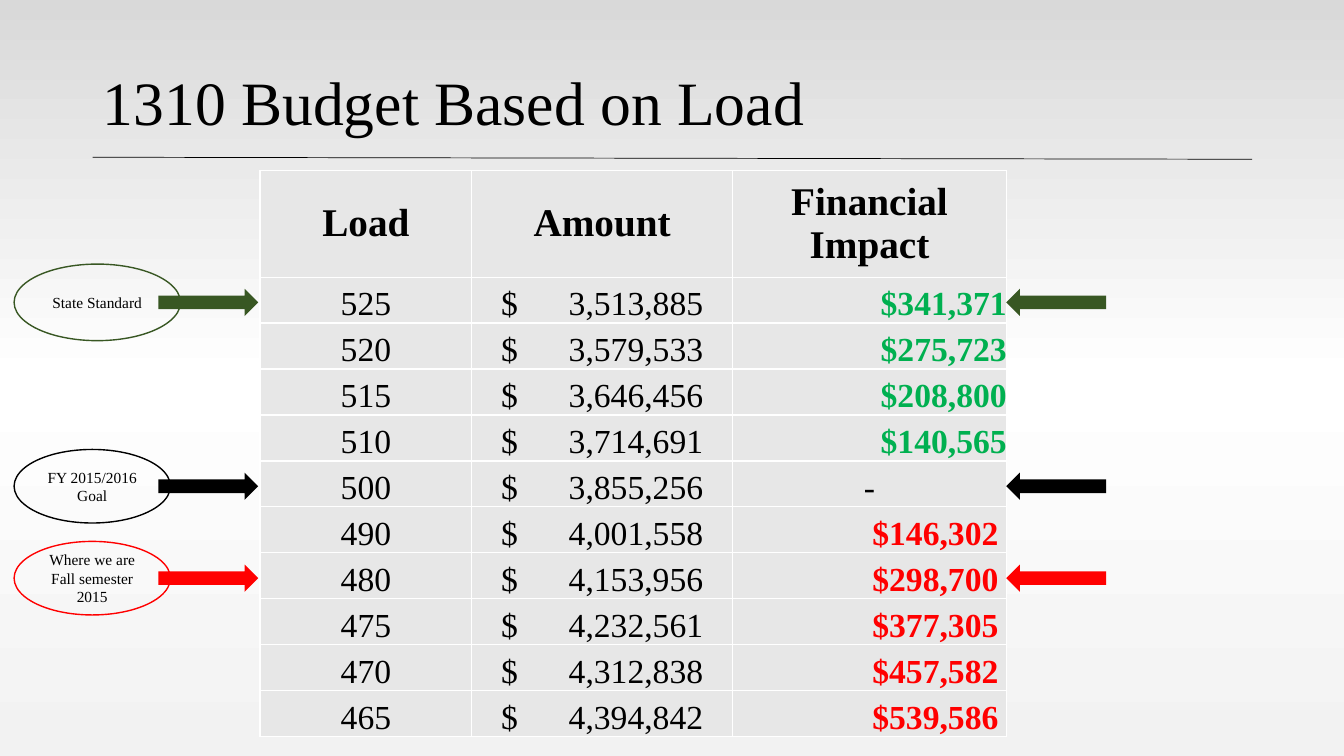
from lxml import etree
from pptx import Presentation
from pptx import util as u
from pptx.dml.color import RGBColor
from pptx.enum import shapes, text
from pptx.oxml.ns import qn

WIDTH, HEIGHT = u.Inches(13.33), u.Inches(7.5)
FONT = "Times New Roman"
BLACK, WHITE, GREY = "000000", "FFFFFF", "E7E7E7"
SAVING, COST, STANDARD = "00B050", "FF0000", "385723"
LEFT, CENTER, RIGHT = text.PP_ALIGN.LEFT, text.PP_ALIGN.CENTER, text.PP_ALIGN.RIGHT
MIDDLE, BOTTOM = text.MSO_ANCHOR.MIDDLE, text.MSO_ANCHOR.BOTTOM

# Table grid, in percent of the slide's width or height
TABLE_LEFT, TABLE_TOP = 19.35, 22.53
COLUMNS = [15.75, 19.4, 20.4]
HEADER_ROW, BODY_ROW = 14.13, 6.08
AMOUNT_INSET = 2.18

HEADINGS = ["Load", "Amount", "Financial Impact"]
BUDGET = [
    ("525", "3,513,885", "$341,371", SAVING),
    ("520", "3,579,533", "$275,723", SAVING),
    ("515", "3,646,456", "$208,800", SAVING),
    ("510", "3,714,691", "$140,565", SAVING),
    ("500", "3,855,256", "-", BLACK),
    ("490", "4,001,558", "$146,302", COST),
    ("480", "4,153,956", "$298,700", COST),
    ("475", "4,232,561", "$377,305", COST),
    ("470", "4,312,838", "$457,582", COST),
    ("465", "4,394,842", "$539,586", COST),
]

# Label, marked load, colour, oval width, oval height
MARKERS = [
    ("State Standard", "525", STANDARD, 12.38, 10.13),
    ("FY 2015/2016 Goal", "500", BLACK, 11.63, 9.73),
    ("Where we are Fall semester 2015", "480", COST, 11.63, 9.73),
]


def across(percent):
    return round(WIDTH * percent / 100)


def down(percent):
    return round(HEIGHT * percent / 100)


def box(left, top, width, height):
    return across(left), down(top), across(width), down(height)


def color(value):
    return RGBColor.from_string(value)


def write(frame, words, size=24, ink=BLACK, bold=False, align=LEFT, spacing=None):
    frame.word_wrap = True
    paragraph = frame.paragraphs[0]
    paragraph.alignment = align
    paragraph.line_spacing = spacing
    run = paragraph.add_run()
    run.text = words
    run.font.name, run.font.size, run.font.bold = FONT, u.Pt(size), bold
    run.font.color.rgb = color(ink)
    return paragraph


def paint_background(slide):
    fill = slide.background.fill
    fill.gradient()
    fill.gradient_angle = 270
    stops = slide.element.find(".//" + qn("a:gsLst"))
    for stop in list(stops):
        stops.remove(stop)
    for position, value in [(0, "D9D9D9"), (50, WHITE), (100, "F2F2F2")]:
        stop = etree.SubElement(stops, qn("a:gs"), pos=str(position * 1000))
        etree.SubElement(stop, qn("a:srgbClr"), val=value)


def add_title(slide):
    rule = slide.shapes.add_connector(
        shapes.MSO_CONNECTOR.STRAIGHT,
        across(6.9), down(20.8), across(93.17), down(21.07))
    rule.line.color.rgb, rule.line.width = color(BLACK), u.Pt(0.5)
    etree.SubElement(rule.element.spPr, qn("a:effectLst"))
    frame = slide.shapes.add_textbox(*box(6.9, 5.33, 86.27, 17.2)).text_frame
    frame.vertical_anchor = MIDDLE
    write(frame, "1310 Budget Based on Load", size=44, spacing=0.9)


def add_borders(cell):
    properties = cell._tc.get_or_add_tcPr()
    for index, side in enumerate(["lnL", "lnR", "lnT", "lnB"]):
        border = etree.Element(qn("a:" + side), w=str(u.Pt(1)))
        solid = etree.SubElement(border, qn("a:solidFill"))
        etree.SubElement(solid, qn("a:srgbClr"), val=WHITE)
        properties.insert(index, border)


def fill_cell(cell, words, anchor=BOTTOM, inset_left=0, inset_right=0, **style):
    cell.fill.solid()
    cell.fill.fore_color.rgb = color(GREY)
    cell.vertical_anchor = anchor
    cell.margin_top = cell.margin_bottom = 0
    cell.margin_left, cell.margin_right = across(inset_left), across(inset_right)
    add_borders(cell)
    return write(cell.text_frame, words, **style)


def add_right_tab(paragraph, position):
    tabs = etree.SubElement(paragraph._p.get_or_add_pPr(), qn("a:tabLst"))
    etree.SubElement(tabs, qn("a:tab"), pos=str(across(position)), algn="r")


def add_budget_table(slide):
    table = slide.shapes.add_table(
        len(BUDGET) + 1, len(COLUMNS),
        *box(TABLE_LEFT, TABLE_TOP, sum(COLUMNS),
             HEADER_ROW + BODY_ROW * len(BUDGET))).table
    for column, width in zip(table.columns, COLUMNS):
        column.width = across(width)
    for index, row in enumerate(table.rows):
        row.height = down(BODY_ROW if index else HEADER_ROW)
    for index, heading in enumerate(HEADINGS):
        fill_cell(table.cell(0, index), heading, anchor=MIDDLE,
                  size=28, bold=True, align=CENTER)
    for index, (load, amount, impact, ink) in enumerate(BUDGET, 1):
        fill_cell(table.cell(index, 0), load, align=CENTER)
        # Dollar sign at the left, figure against a right tab
        paragraph = fill_cell(table.cell(index, 1), "$\t" + amount,
                              inset_left=AMOUNT_INSET)
        add_right_tab(paragraph, COLUMNS[1] - 2 * AMOUNT_INSET)
        fill_cell(table.cell(index, 2), impact, ink=ink, bold=ink != BLACK,
                  align=CENTER if ink == BLACK else RIGHT,
                  inset_right=0.62 if ink == COST else 0)


def add_arrow(slide, left, middle, ink, rotation=0):
    height = 3.6
    arrow = slide.shapes.add_shape(
        shapes.MSO_SHAPE.LEFT_ARROW, *box(left, middle - height / 2, 7.43, height))
    arrow.rotation = rotation
    arrow.shadow.inherit = False
    arrow.fill.solid()
    arrow.fill.fore_color.rgb = color(ink)
    arrow.line.fill.background()


def add_oval(slide, label, middle, ink, width, height):
    oval = slide.shapes.add_shape(
        shapes.MSO_SHAPE.OVAL, *box(1.05, middle - height / 2, width, height))
    oval.shadow.inherit = False
    oval.fill.background()
    oval.line.color.rgb, oval.line.width = color(ink), u.Pt(1)
    oval.text_frame.vertical_anchor = MIDDLE
    write(oval.text_frame, label, size=11, align=CENTER)


def add_marker(slide, label, load, ink, width, height):
    row = [entry[0] for entry in BUDGET].index(load)
    middle = TABLE_TOP + HEADER_ROW + BODY_ROW * (row + 0.5) + 0.3
    add_arrow(slide, 74.87, middle, ink)
    add_arrow(slide, 11.78, middle, ink, rotation=180)
    add_oval(slide, label, middle, ink, width, height)


def main():
    presentation = Presentation()
    presentation.slide_width, presentation.slide_height = WIDTH, HEIGHT
    slide = presentation.slides.add_slide(presentation.slide_layouts[6])
    paint_background(slide)
    add_title(slide)
    add_budget_table(slide)
    for marker in MARKERS:
        add_marker(slide, *marker)
    presentation.save("out.pptx")


if __name__ == "__main__":
    main()
